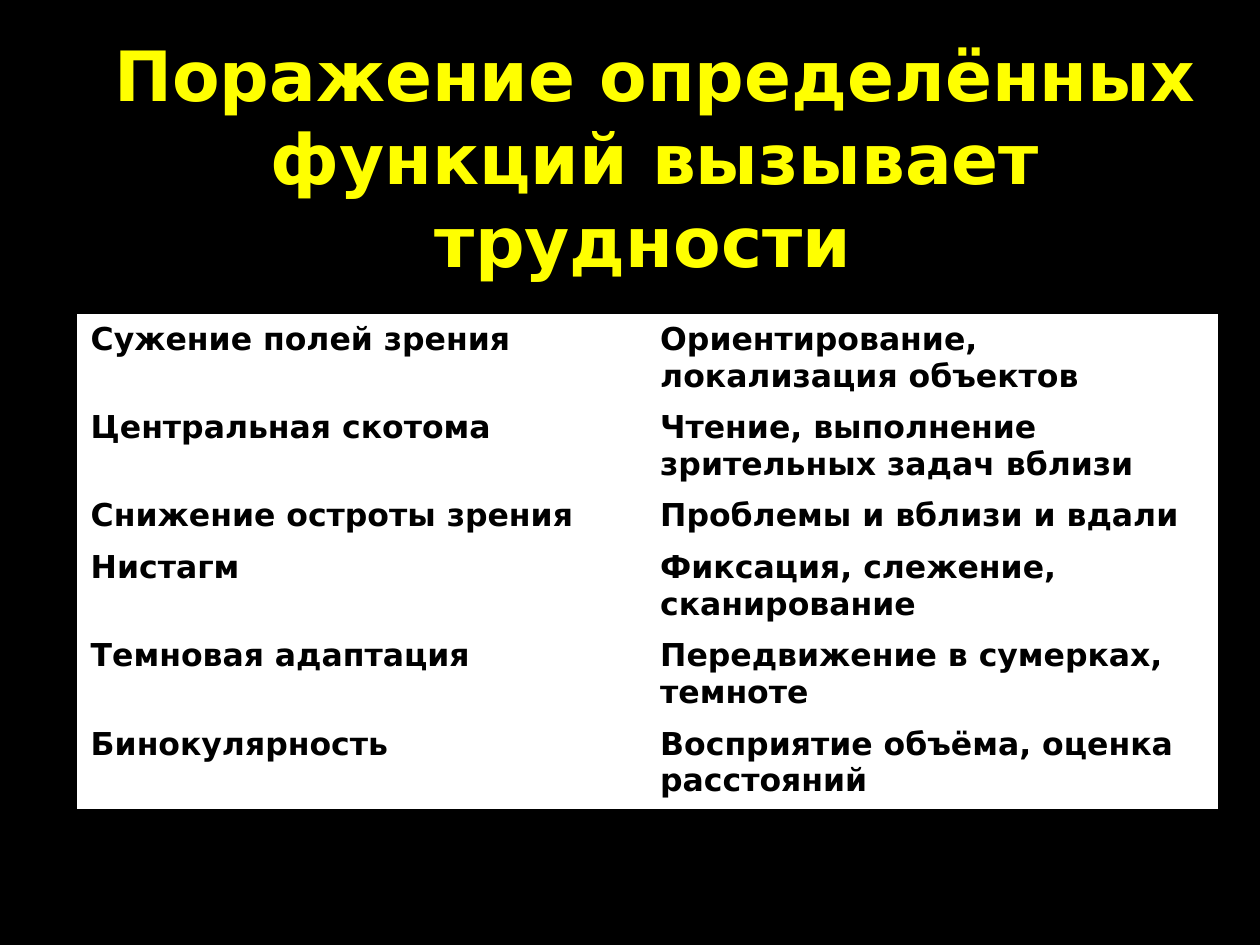
"""Build a slide on visual impairments and the difficulties they cause."""
from dataclasses import dataclass

from pptx import Presentation
from pptx.dml.color import RGBColor
from pptx.enum.text import MSO_ANCHOR, PP_ALIGN
from pptx.util import Inches, Pt


@dataclass(frozen=True)
class Theme:
    """Colours, font and type sizes."""
    back: str = "000000"
    title: str = "FFFF00"
    cell: str = "FFFFFF"
    ink: str = "000000"
    font: str = "DejaVu Sans"
    head: float = 39.6
    body: float = 18


class Deck:
    """Hold the theme and the current slide, sized in shares."""

    def __init__(self, theme, wide=10, high=7.5):
        """Open a presentation with one blank slide."""
        self.theme = theme
        self.prs = Presentation()
        self.prs.slide_width = Inches(wide)
        self.prs.slide_height = Inches(high)
        self.slide = self.prs.slides.add_slide(self.prs.slide_layouts[6])
        self.paint(self.slide.background.fill, theme.back)

    def paint(self, fill, color):
        """Make a fill solid."""
        fill.solid()
        fill.fore_color.rgb = RGBColor.from_string(color)

    def place(self, x, y, w, h):
        """Turn shares of the slide into lengths."""
        wide, high = self.prs.slide_width, self.prs.slide_height
        return int(x * wide), int(y * high), int(w * wide), int(h * high)

    def letter(self, frame, text, size, color):
        """Put bold text in a frame and return its paragraph."""
        frame.word_wrap = True
        para = frame.paragraphs[0]
        para.add_run().text = text
        font = para.font
        font.name, font.size, font.bold = self.theme.font, Pt(size), True
        font.color.rgb = RGBColor.from_string(color)
        return para

    def title(self, text, *box):
        """Add the centred heading."""
        frame = self.slide.shapes.add_textbox(*self.place(*box)).text_frame
        frame.vertical_anchor = MSO_ANCHOR.MIDDLE
        para = self.letter(frame, text, self.theme.head, self.theme.title)
        para.alignment = PP_ALIGN.CENTER

    def table(self, rows, *box):
        """Add a plain table whose rows grow with their text."""
        shape = self.slide.shapes.add_table(
            len(rows), len(rows[0]), *self.place(*box))
        grid = shape.table
        grid.horz_banding = False
        for r, row in enumerate(rows):
            for c, text in enumerate(row):
                cell = grid.cell(r, c)
                self.paint(cell.fill, self.theme.cell)
                self.letter(cell.text_frame, text,
                            self.theme.body, self.theme.ink)

    def save(self):
        """Save the file."""
        self.prs.save("out.pptx")


ROWS = [
    ("Сужение полей зрения", "Ориентирование, локализация объектов"),
    ("Центральная скотома", "Чтение, выполнение зрительных задач вблизи"),
    ("Снижение остроты зрения", "Проблемы и вблизи и вдали"),
    ("Нистагм", "Фиксация, слежение, сканирование"),
    ("Темновая адаптация", "Передвижение в сумерках, темноте"),
    ("Бинокулярность", "Восприятие объёма, оценка расстояний"),
]


def main():
    """Build and save the slide."""
    deck = Deck(Theme())
    deck.title("Поражение определённых функций вызывает трудности ",
               0.07, 0.62 / 7.5, 0.9, 1.25 / 7.5)
    deck.table(ROWS, 0.062, 2.5 / 7.5, 0.904, len(ROWS) * 0.41 / 7.5)
    deck.save()


if __name__ == "__main__":
    main()
